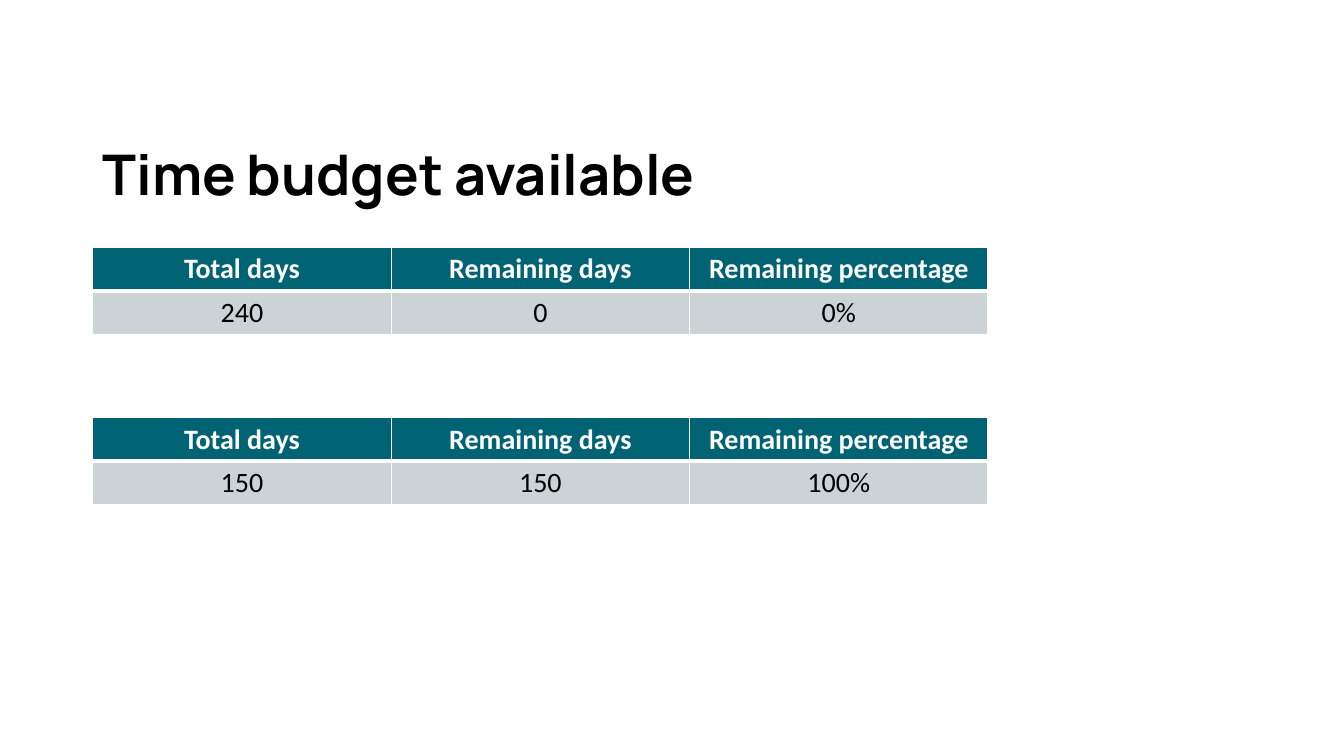
from lxml.etree import SubElement
from pptx import Presentation
from pptx.dml.color import RGBColor as Rgb
from pptx.enum.text import MSO_ANCHOR as Anchor, PP_ALIGN as Align
from pptx.oxml.ns import qn
from pptx.util import Inches, Pt

COLORS = {"white": "FFFFFF", "black": "000000", "teal": "006374", "grey": "CCD3D6"}
TITLE = {"name": "Manrope", "size": Pt(40), "bold": True}
HEADER = {"name": "Calibri", "size": Pt(20), "bold": True}
VALUE = {**HEADER, "bold": False}
HEADINGS = ["Total days", "Remaining days", "Remaining percentage"]
BUDGETS = [(2.45, ["240", "0", "0%"]), (4.14, ["150", "150", "100%"])]
LEFT, COLUMN_WIDTH, ROW_HEIGHT = 0.92, 2.96, 0.41


class BudgetSlide:
    """Holds the style and the current slide, and adds titles and tables."""

    def __init__(self, deck, colors):
        self.colors = colors
        self.page = deck.slides.add_slide(deck.slide_layouts[6])

    def add_span(self, para, text, style, color):
        span = para.add_run()
        span.text = text
        for key, value in style.items():
            setattr(span.font, key, value)
        span.font.color.rgb = Rgb.from_string(self.colors[color])

    def title(self, text, left, top, width, height):
        box = self.page.shapes.add_textbox(*map(Inches, (left, top, width, height)))
        frame = box.text_frame
        frame.word_wrap = True
        frame.vertical_anchor = Anchor.MIDDLE
        para = frame.paragraphs[0]
        para.line_spacing = 0.9
        self.add_span(para, text, TITLE, "black")

    def border(self, cell, widths):
        properties = cell._tc.get_or_add_tcPr()
        for index, (side, points) in enumerate(widths.items()):
            line = SubElement(properties, qn(f"a:ln{side}"), w=str(Pt(points)))
            fill = SubElement(line, qn("a:solidFill"))
            SubElement(fill, qn("a:srgbClr"), val=self.colors["white"])
            properties.insert(index, line)

    def cell(self, cell, text, style, color, fill, widths):
        cell.fill.solid()
        cell.fill.fore_color.rgb = Rgb.from_string(self.colors[fill])
        cell.vertical_anchor = Anchor.MIDDLE
        para = cell.text_frame.paragraphs[0]
        para.alignment = Align.CENTER
        self.add_span(para, text, style, color)
        self.border(cell, widths)

    def table(self, top, values):
        rows = [
            (HEADINGS, HEADER, "white", "teal", {"L": 1, "R": 1, "T": 1, "B": 3}),
            (values, VALUE, "black", "grey", {"L": 1, "R": 1, "T": 3, "B": 1}),
        ]
        size = (COLUMN_WIDTH * len(HEADINGS), ROW_HEIGHT * len(rows))
        frame = self.page.shapes.add_table(
            len(rows), len(HEADINGS), *map(Inches, (LEFT, top, *size)))
        for row, (texts, *format_values) in zip(frame.table.rows, rows):
            for cell, text in zip(row.cells, texts):
                self.cell(cell, text, *format_values)


def main():
    deck = Presentation()
    deck.slide_width, deck.slide_height = Inches(13.33), Inches(7.5)
    slide = BudgetSlide(deck, COLORS)
    slide.title("Time budget available", LEFT, 1.24, 11.5, 1.03)
    for top, values in BUDGETS:
        slide.table(top, values)
    deck.save("out.pptx")


if __name__ == "__main__":
    main()
